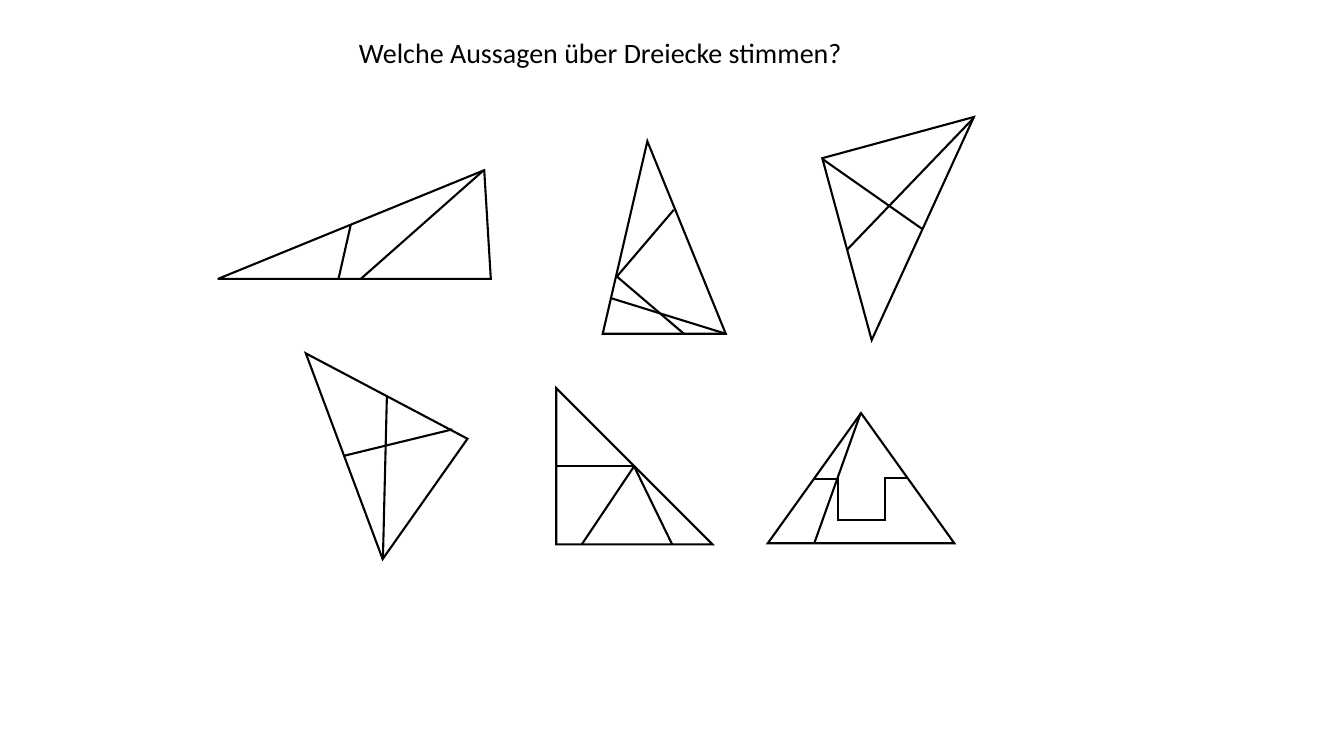
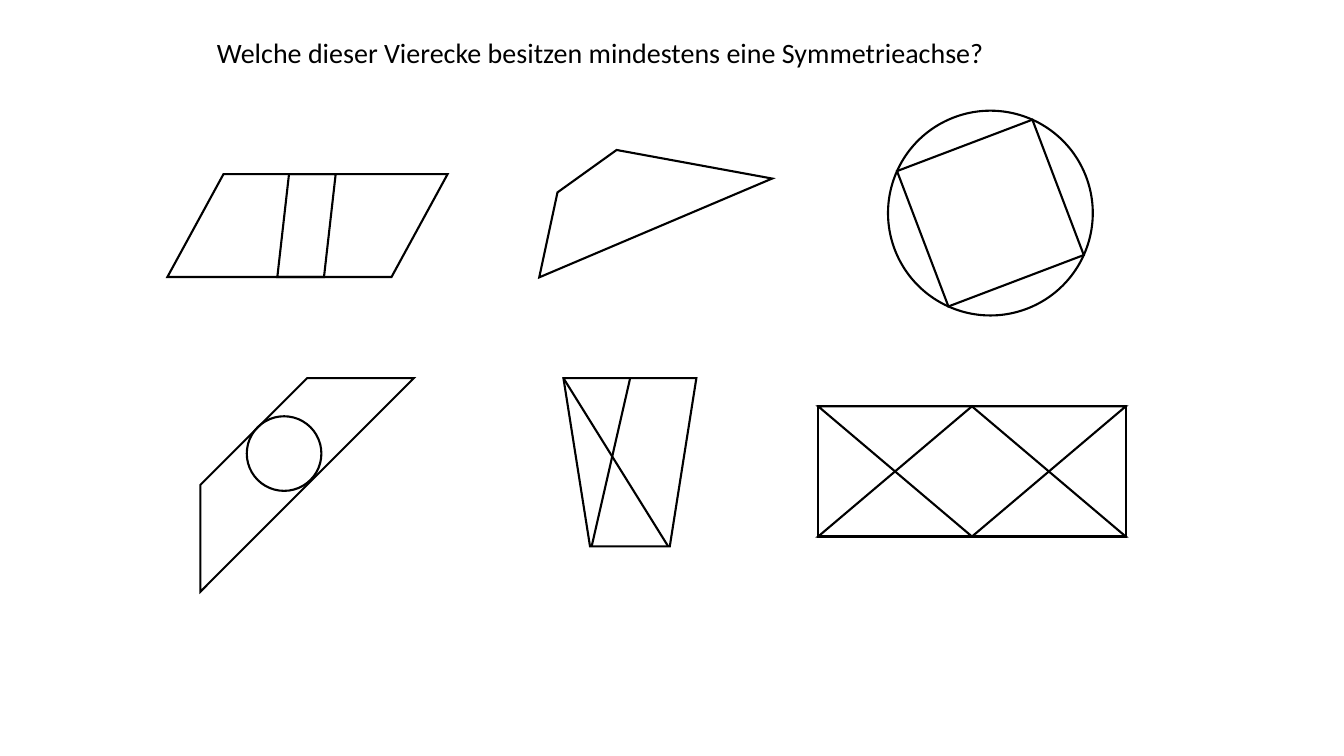
"""Build two geometry question slides about triangles and quadrilaterals."""
from dataclasses import dataclass
from typing import Union

import lxml.etree
import pptx
import pptx.dml.color
import pptx.enum.shapes
import pptx.enum.text
import pptx.oxml.ns
import pptx.shapes.base
import pptx.shapes.shapetree
import pptx.slide
import pptx.text.text
import pptx.util

Cm = pptx.util.Cm
Kind = pptx.enum.shapes.MSO_SHAPE
Point = tuple[float, float]
qn = pptx.oxml.ns.qn

BLACK = pptx.dml.color.RGBColor(0x00, 0x00, 0x00)
FONT = "Calibri"
OUTLINE = pptx.util.Pt(1.5)
TITLE_BOX = (4.32, 0.76, 21.62, 1.12)
TITLE_ONLY = 5


@dataclass(frozen=True)
class Preset:
    """A preset outline, placed in centimetres."""
    kind: Kind
    box: tuple[float, float, float, float]
    rotation: float = 0
    adjustments: tuple[float, ...] = ()


@dataclass(frozen=True)
class Segment:
    """A straight line between two points."""
    start: Point
    end: Point


@dataclass(frozen=True)
class Outline:
    """A chain of points, open or closed."""
    points: tuple[Point, ...]
    closed: bool = True


Element = Union[Preset, Segment, Outline]


@dataclass(frozen=True)
class Figure:
    """The elements of one geometric figure."""
    elements: tuple[Element, ...]
    grouped: bool = False


@dataclass(frozen=True)
class Question:
    """One slide: a question and its figures."""
    text: str
    figures: tuple[Figure, ...]


CIRCLE_BOX = (22.38, 2.79, 5.16, 5.16)
RECTANGLE_BOX = (20.62, 10.24, 7.75, 3.28)

TRIANGLES = Question("Welche Aussagen über Dreiecke stimmen?", (
    Figure((
        Preset(Kind.ISOSCELES_TRIANGLE, (5.49, 4.29, 6.88, 2.74), 0, (0.976,)),
        Segment((12.19, 4.29), (9.09, 7.03)),
        Segment((8.84, 5.66), (8.53, 7.03)),
    )),
    Figure((
        Preset(Kind.ISOSCELES_TRIANGLE, (15.19, 3.56, 3.1, 4.85), 0, (0.363,)),
        Preset(Kind.HALF_FRAME, (16, 5.74, 2.21, 2.21), 310.5, (0, 0)),
        Segment((15.42, 7.52), (18.29, 8.41)),
    )),
    Figure((
        Preset(Kind.RIGHT_TRIANGLE, (20.88, 3.78, 4.75, 3.96), 74.8),
        Segment((20.73, 4.01), (23.24, 5.77)),
        Segment((24.54, 2.97), (21.34, 6.3)),
    )),
    Figure((
        Preset(Kind.ISOSCELES_TRIANGLE, (6.99, 8.97, 3.71, 4.57), 305.2, (0.841,)),
        Segment((9.75, 9.98), (9.65, 14.07)),
        Segment((8.69, 11.48), (11.4, 10.82)),
    )),
    Figure((
        Preset(Kind.RIGHT_TRIANGLE, (14.02, 9.78, 3.94, 3.94)),
        Segment((14.02, 11.75), (15.98, 11.75)),
        Segment((15.98, 11.75), (14.66, 13.72)),
        Segment((15.98, 11.75), (16.94, 13.72)),
    )),
    Figure((
        Preset(Kind.ISOSCELES_TRIANGLE, (19.35, 10.41, 4.7, 3.28)),
        Outline(((20.52, 12.08), (21.11, 12.08), (21.11, 13.11),
                 (22.3, 13.11), (22.3, 12.04), (22.86, 12.04)), closed=False),
        Segment((20.52, 13.69), (21.69, 10.41)),
    )),
))

QUADRILATERALS = Question(
    "Welche dieser Vierecke besitzen mindestens eine Symmetrieachse?", (
        Figure((
            Outline(((13.59, 6.99), (19.46, 4.5), (15.54, 3.78), (14.05, 4.85))),
        )),
        Figure((
            Preset(Kind.OVAL, CIRCLE_BOX, 24.2),
            Preset(Kind.DIAMOND, CIRCLE_BOX, 24.2),
        ), grouped=True),
        Figure((
            Preset(Kind.FLOWCHART_DATA, (4.22, 4.39, 7.06, 2.59)),
            Preset(Kind.FLOWCHART_DATA, (6.99, 4.39, 1.47, 2.59)),
        ), grouped=True),
        Figure((
            Preset(Kind.DIAGONAL_STRIPE, (5.05, 9.53, 5.38, 5.38)),
            Preset(Kind.OVAL, (6.22, 10.49, 1.88, 1.88)),
        ), grouped=True),
        Figure((
            Preset(Kind.FLOWCHART_MANUAL_OPERATION, (14.2, 9.53, 3.35, 4.24)),
            Segment((14.2, 9.53), (16.84, 13.77)),
            Segment((15.88, 9.53), (14.91, 13.77)),
        )),
        Figure((
            Preset(Kind.FLOWCHART_PROCESS, RECTANGLE_BOX),
            Preset(Kind.ISOSCELES_TRIANGLE, RECTANGLE_BOX),
            Preset(Kind.ISOSCELES_TRIANGLE, RECTANGLE_BOX, 180),
        ), grouped=True),
    ))


def write_text(frame: pptx.text.text.TextFrame, text: str, *, size: float = 20,
               font: str = FONT, color: pptx.dml.color.RGBColor = BLACK) -> None:
    """Write one centred, formatted paragraph."""
    frame.word_wrap = True
    frame.auto_size = pptx.enum.text.MSO_AUTO_SIZE.SHAPE_TO_FIT_TEXT
    frame.vertical_anchor = pptx.enum.text.MSO_ANCHOR.TOP
    paragraph = frame.paragraphs[0]
    paragraph.alignment = pptx.enum.text.PP_ALIGN.CENTER
    run = paragraph.add_run()
    run.text = text
    run.font.size = pptx.util.Pt(size)
    run.font.name = font
    run.font.color.rgb = color


def ink(stroke: pptx.shapes.base.BaseShape) -> None:
    """Give an element its black line with sharp corners and no shadow."""
    stroke.line.color.rgb = BLACK
    stroke.line.width = OUTLINE
    properties = stroke._element.spPr
    miter = lxml.etree.SubElement(properties.find(qn("a:ln")), qn("a:miter"))
    miter.set("lim", "800000")
    lxml.etree.SubElement(properties, qn("a:effectLst"))


def draw_element(
        canvas: Union[pptx.shapes.shapetree.SlideShapes,
                      pptx.shapes.shapetree.GroupShapes],
        element: Element) -> None:
    """Draw one element of a figure."""
    if isinstance(element, Segment):
        stroke = canvas.add_connector(
            pptx.enum.shapes.MSO_CONNECTOR.STRAIGHT,
            *map(Cm, element.start + element.end))
    elif isinstance(element, Outline):
        corners = [(Cm(x), Cm(y)) for x, y in element.points]
        builder = canvas.build_freeform(*corners[0])
        builder.add_line_segments(corners[1:], close=element.closed)
        stroke = builder.convert_to_shape()
        stroke.fill.background()
    else:
        stroke = canvas.add_shape(element.kind, *map(Cm, element.box))
        stroke.rotation = element.rotation
        for index, value in enumerate(element.adjustments):
            stroke.adjustments[index] = value
        stroke.fill.background()
    ink(stroke)


def draw_question(slide: pptx.slide.Slide, question: Question) -> None:
    """Fill a slide with its question and figures."""
    title = slide.shapes.title
    title.left, title.top, title.width, title.height = map(Cm, TITLE_BOX)
    write_text(title.text_frame, question.text)
    for figure in question.figures:
        canvas = slide.shapes
        if figure.grouped:
            canvas = slide.shapes.add_group_shape().shapes
        for element in figure.elements:
            draw_element(canvas, element)


def main() -> None:
    """Build and save the presentation."""
    deck = pptx.Presentation()
    deck.slide_width, deck.slide_height = Cm(33.87), Cm(19.05)
    for question in (TRIANGLES, QUADRILATERALS):
        slide = deck.slides.add_slide(deck.slide_layouts[TITLE_ONLY])
        draw_question(slide, question)
    deck.save("out.pptx")


if __name__ == "__main__":
    main()
